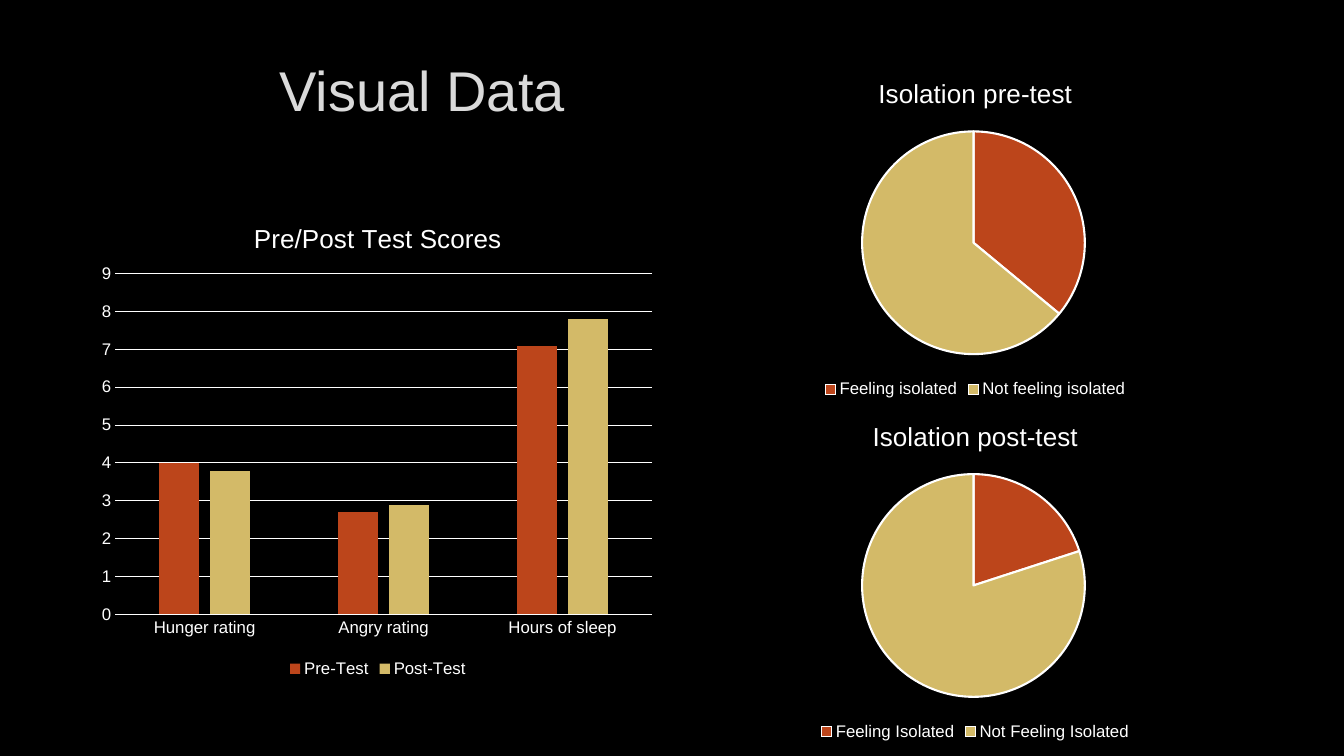
from lxml.etree import SubElement
from pptx import Presentation
from pptx.chart.data import CategoryChartData
from pptx.dml.color import RGBColor
from pptx.enum.chart import XL_CHART_TYPE, XL_LEGEND_POSITION, XL_TICK_MARK
from pptx.enum.text import MSO_ANCHOR, MSO_AUTO_SIZE, PP_ALIGN
from pptx.oxml.ns import qn
from pptx.util import Pt

COLORS = {"back": "000000", "title": "DADADA", "text": "FFFFFF",
          "pre": "BC451B", "post": "D3BA68"}
SERIES_COLORS = ("pre", "post")
PIES = [
    ("Isolation pre-test", ("Feeling isolated", "Not feeling isolated"), (36, 64)),
    ("Isolation post-test", ("Feeling Isolated", "Not Feeling Isolated"), (20, 80)),
]


def rgb(name):
    """Return the named colour."""
    return RGBColor.from_string(COLORS[name])


def format_font(font, size, color="text"):
    """Apply the slide font in a size and colour."""
    for key, value in {"name": "Arial", "size": Pt(size), "bold": False}.items():
        setattr(font, key, value)
    font.color.rgb = rgb(color)


def format_line(line, width):
    """Draw a white line of the given width."""
    line.color.rgb = rgb("text")
    line.width = Pt(width)


def fill_solid(fill, color):
    """Fill with one named colour."""
    fill.solid()
    fill.fore_color.rgb = rgb(color)


def set_plot_layout(chart, fractions):
    """Fix the inner plot area as fractions of the chart."""
    area = chart.plots[0]._element.getparent()
    layout = area.find(qn("c:layout"))
    if layout is None:
        layout = SubElement(area, qn("c:layout"))
        area.insert(0, layout)
    manual = SubElement(layout, qn("c:manualLayout"))
    values = {"layoutTarget": "inner", "xMode": "edge", "yMode": "edge",
              **dict(zip("xywh", fractions))}
    for tag, value in values.items():
        SubElement(manual, qn(f"c:{tag}")).set("val", str(value))


def add_titled_chart(s, box, kind, title, categories, series, plot_area):
    """Add a chart with its title and bottom legend, and return it."""
    data = CategoryChartData()
    data.categories = categories
    for name, values in series:
        data.add_series(name, values)
    chart = s.shapes.add_chart(kind, *map(Pt, box), data).chart
    format_font(chart.font, 10)
    tf = chart.chart_title.text_frame
    tf.text = title
    format_font(tf.paragraphs[0].runs[0].font, 18.6)
    chart.chart_title.include_in_layout = False
    chart.has_legend = True
    chart.legend.position = XL_LEGEND_POSITION.BOTTOM
    chart.legend.include_in_layout = False
    format_font(chart.legend.font, 12)
    set_plot_layout(chart, plot_area)
    return chart


def add_scores(s, box):
    """Add the column chart of test scores."""
    chart = add_titled_chart(
        s, box, XL_CHART_TYPE.COLUMN_CLUSTERED, "Pre/Post Test Scores",
        ("Hunger rating", "Angry rating", "Hours of sleep"),
        [("Pre-Test", (4, 2.7, 7.1)), ("Post-Test", (3.8, 2.9, 7.8))],
        (0.04, 0.15, 0.94, 0.71))
    plot = chart.plots[0]
    for key, value in {"gap_width": 219, "overlap": -27,
                       "vary_by_categories": False}.items():
        setattr(plot, key, value)
    for series, color in zip(plot.series, SERIES_COLORS):
        fill_solid(series.format.fill, color)
    for axis in (chart.category_axis, chart.value_axis):
        axis.major_tick_mark = axis.minor_tick_mark = XL_TICK_MARK.NONE
        format_font(axis.tick_labels.font, 12)
    format_line(chart.category_axis.format.line, 0.75)
    axis = chart.value_axis
    for key, value in {"minimum_scale": 0, "maximum_scale": 9, "major_unit": 1}.items():
        setattr(axis, key, value)
    axis.format.line.fill.background()
    format_line(axis.major_gridlines.format.line, 0.75)


def add_pie(s, box, title, categories, values):
    """Add a pie chart of isolation answers."""
    chart = add_titled_chart(s, box, XL_CHART_TYPE.PIE, title, categories,
                             [(title, values)], (0.2, 0.21, 0.59, 0.65))
    plot = chart.plots[0]
    plot.vary_by_categories = True
    for i, color in enumerate(SERIES_COLORS):
        point = plot.series[0].points[i].format
        fill_solid(point.fill, color)
        format_line(point.line, 1.5)


def add_title(s, box):
    """Place and format the slide title."""
    sp = s.shapes.title
    for key, value in zip(("left", "top", "width", "height"), box):
        setattr(sp, key, Pt(value))
    tf = sp.text_frame
    tf.text = "Visual Data"
    for key, value in {"vertical_anchor": MSO_ANCHOR.MIDDLE, "word_wrap": True,
                       "auto_size": MSO_AUTO_SIZE.NONE}.items():
        setattr(tf, key, value)
    p = tf.paragraphs[0]
    p.alignment = PP_ALIGN.CENTER
    format_font(p.runs[0].font, 40, "title")


def main():
    """Build the slide and save it."""
    prs = Presentation()
    prs.slide_width, prs.slide_height = Pt(960), Pt(540)
    s = prs.slides.add_slide(prs.slide_layouts[5])
    fill_solid(s.background.fill, "back")
    add_title(s, (-106, 26, 815, 76))
    add_scores(s, (66, 144, 408, 343))
    pie_height = 244.8
    for i, pie in enumerate(PIES):
        add_pie(s, (561, 42.5 + i * pie_height, 271.5, pie_height), *pie)
    prs.save("out.pptx")


if __name__ == "__main__":
    main()
